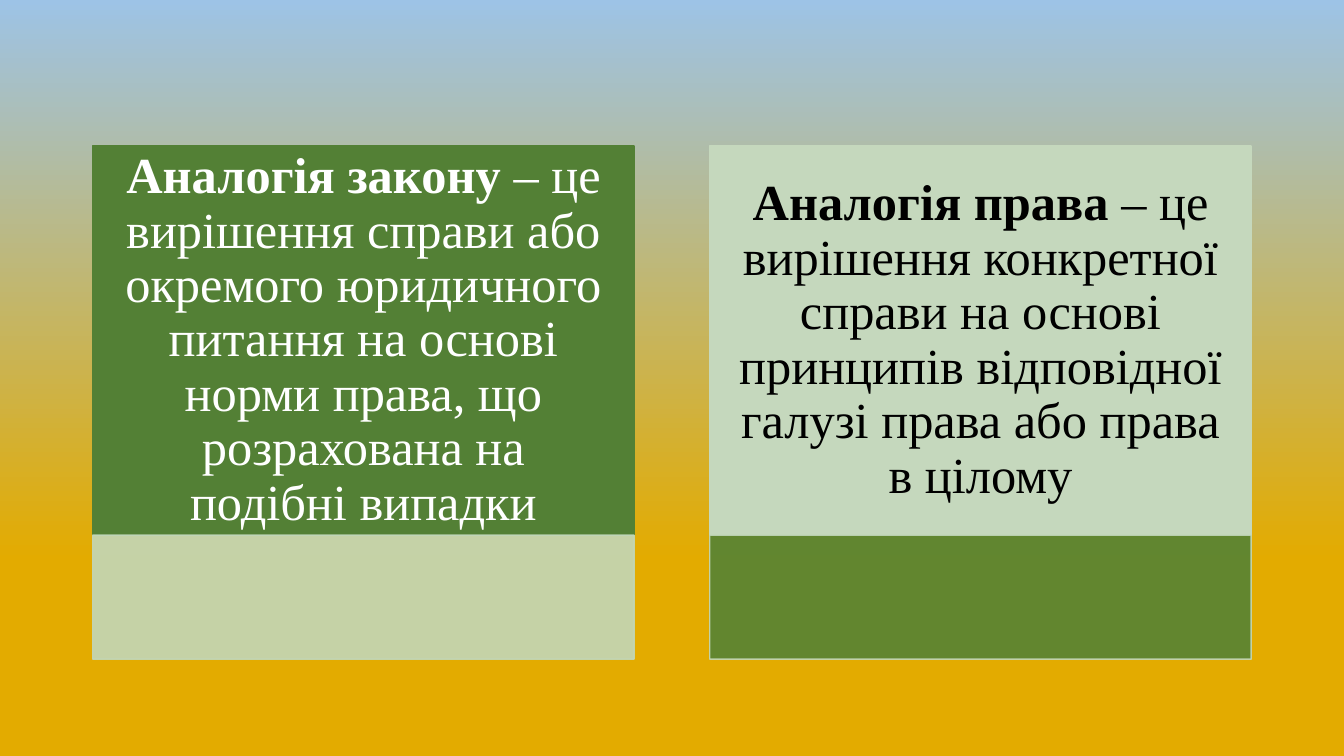
import pptx
import pptx.util
import pptx.dml.color
import pptx.enum.shapes
import pptx.enum.text
import pptx.oxml.ns
import lxml.etree
from pptx.util import Inches

THEME = {
    "gold": "E3AB00",
    "sky": "9DC3E6",
    "green": "538035",
    "mint": "C5D8BD",
    "pale": "C2D7B9",
    "leaf": "548235",
    "white": "FFFFFF",
    "black": "000000",
    "font": "Times New Roman",
    "size": 36,
}


def rgb(name):
    return pptx.dml.color.RGBColor.from_string(THEME[name])


def add_box(slide, left, top, height, fill, line, opacity):
    shape = slide.shapes.add_shape(
        pptx.enum.shapes.MSO_SHAPE.RECTANGLE, left, top, Inches(5.37), height)
    shape.shadow.inherit = False
    shape.fill.solid()
    shape.fill.fore_color.rgb = rgb(fill)
    shape.line.color.rgb = rgb(line)
    shape.line.width = pptx.util.Pt(1)
    if opacity < 100:
        for color in shape.element.spPr.iter(pptx.oxml.ns.qn("a:srgbClr")):
            alpha = lxml.etree.SubElement(color, pptx.oxml.ns.qn("a:alpha"))
            alpha.set("val", str(opacity * 1000))
    return shape


presentation = pptx.Presentation()
presentation.slide_width = Inches(13.33)
presentation.slide_height = Inches(7.5)
slide = presentation.slides.add_slide(presentation.slide_layouts[6])

background = slide.background.fill
background.gradient()
background.gradient_angle = 90
for stop, position, name in zip(background.gradient_stops, (0.26, 1), ("gold", "sky")):
    stop.position = position
    stop.color.rgb = rgb(name)

cards = [
    ("Аналогія закону ",
     "– це вирішення справи або окремого юридичного питання на основі "
     "норми права, що розрахована на подібні випадки",
     "green", "white", "pale"),
    ("Аналогія права ",
     "– це вирішення конкретної справи на основі принципів відповідної "
     "галузі права або права в цілому",
     "mint", "black", "leaf"),
]

for index, (term, definition, fill, text_color, footer_fill) in enumerate(cards):
    left = Inches(0.92 + 6.12 * index)
    card = add_box(slide, left, Inches(1.45), Inches(3.86), fill, fill, 100)
    add_box(slide, left, Inches(5.31), Inches(1.23), footer_fill, "pale", 90)

    frame = card.text_frame
    frame.word_wrap = True
    frame.vertical_anchor = pptx.enum.text.MSO_ANCHOR.MIDDLE
    frame.margin_left = frame.margin_right = Inches(0.28)
    frame.margin_top = frame.margin_bottom = Inches(0.16)
    paragraph = frame.paragraphs[0]
    paragraph.alignment = pptx.enum.text.PP_ALIGN.CENTER
    paragraph.line_spacing = 0.9
    for text, bold in ((term, True), (definition, False)):
        run = paragraph.add_run()
        run.text = text
        run.font.name = THEME["font"]
        run.font.size = pptx.util.Pt(THEME["size"])
        run.font.bold = bold
        run.font.color.rgb = rgb(text_color)

presentation.save("out.pptx")
